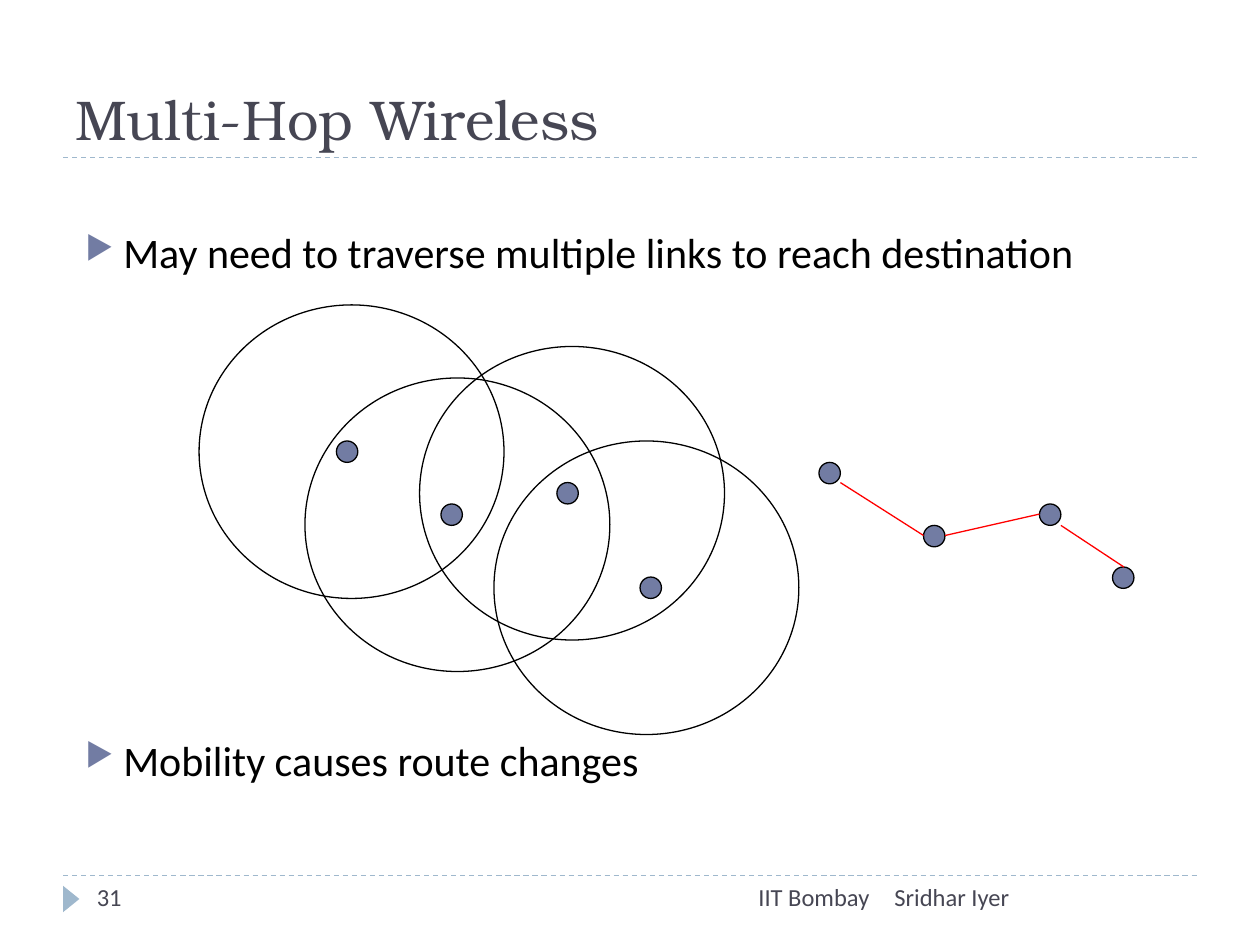
from typing import NamedTuple

import lxml.etree
import pptx
import pptx.dml.color
import pptx.enum.dml
import pptx.enum.shapes
import pptx.enum.text
import pptx.oxml
import pptx.oxml.ns
import pptx.util

Inches = pptx.util.Inches
Pt = pptx.util.Pt
Shapes = pptx.enum.shapes.MSO_SHAPE
Align = pptx.enum.text.PP_ALIGN
Anchor = pptx.enum.text.MSO_ANCHOR

COLORS = {
    "heading": "464653", "text": "000000", "node": "727CA3",
    "rule": "9FB8CD", "link": "FF0000", "paper": "FFFFFF",
}
BODY_FONT = "Calibri"
TITLE_FONT = "TeX Gyre Bonum"
RANGE_SIZE = (2.42, 2.33)
NODE_SIZE = (0.17, 0.17)


class Circle(NamedTuple):
    left: float
    top: float
    size: tuple[float, float]
    fill: str | None = None


class Line(NamedTuple):
    start: tuple[float, float]
    end: tuple[float, float]
    color: str
    dashed: bool = False


class Label(NamedTuple):
    text: str
    left: float
    top: float
    width: float
    height: float
    size: float = 14
    font: str = BODY_FONT
    align: Align = Align.LEFT
    anchor: Anchor = Anchor.TOP


class Bullet(NamedTuple):
    text: str
    space_before: float


RULES = [Line((0.5, y), (9.5, y), "rule", True) for y in (6.95, 1.25)]
LABELS = [
    Label("Sridhar Iyer", 7, 6.95, 2.5, 0.4),
    Label("IIT Bombay", 3.17, 6.95, 3.83, 0.4, align=Align.RIGHT),
    Label("31", 0.67, 6.95, 2.17, 0.4),
    Label("Multi-Hop Wireless", 0.5, 0.17, 9, 1.08, 32, TITLE_FONT,
          anchor=Anchor.BOTTOM),
]
# The space before the second bullet leaves room for the network drawing
BULLETS = [
    Bullet("May need to traverse multiple links to reach destination", 6),
    Bullet("Mobility causes route changes", 267),
]
RANGES = [
    Circle(1.58, 2.42, RANGE_SIZE, "paper"),
    Circle(2.42, 3, RANGE_SIZE),
    Circle(3.33, 2.75, RANGE_SIZE),
    Circle(3.92, 3.5, RANGE_SIZE),
]
NODES = [
    Circle(left, top, NODE_SIZE, "node")
    for left, top in (
        (2.67, 3.5), (3.5, 4), (4.42, 3.83), (5.08, 4.58),
        (6.5, 3.67), (7.33, 4.17), (8.25, 4), (8.83, 4.5),
    )
]
LINKS = [
    Line((6.67, 3.83), (7.33, 4.25), "link"),
    Line((7.5, 4.25), (8.25, 4.08), "link"),
    Line((8.42, 4.17), (8.92, 4.5), "link"),
]


def color(name: str) -> pptx.dml.color.RGBColor:
    return pptx.dml.color.RGBColor.from_string(COLORS[name])


def add_text(para, text: str, size: float, font: str, color_name: str) -> None:
    run = para.add_run()
    run.text = text
    run.font.size = Pt(size)
    run.font.name = font
    run.font.color.rgb = color(color_name)


def add_label(page, label: Label) -> None:
    box = page.shapes.add_textbox(Inches(label.left), Inches(label.top),
                                  Inches(label.width), Inches(label.height))
    box.text_frame.word_wrap = True
    box.text_frame.vertical_anchor = label.anchor
    para = box.text_frame.paragraphs[0]
    para.alignment = label.align
    add_text(para, label.text, label.size, label.font, "heading")


def set_bullet(para) -> None:
    props = para._p.get_or_add_pPr()
    props.set("marL", str(Inches(0.3)))
    props.set("indent", str(-Inches(0.3)))
    namespace = pptx.oxml.ns.nsdecls("a")
    for xml in (
        f'<a:buClr {namespace}><a:srgbClr val="{COLORS["node"]}"/></a:buClr>',
        f'<a:buSzPct {namespace} val="76000"/>',
        f'<a:buChar {namespace} char="▶"/>',
    ):
        props.append(pptx.oxml.parse_xml(xml))


def add_bullets(page, bullets: list[Bullet]) -> None:
    box = page.shapes.add_textbox(Inches(0.58), Inches(1.83),
                                  Inches(8.92), Inches(4.5))
    frame = box.text_frame
    frame.word_wrap = True
    for index, bullet in enumerate(bullets):
        para = frame.add_paragraph() if index else frame.paragraphs[0]
        para.line_spacing = 0.8
        para.space_before = Pt(bullet.space_before)
        set_bullet(para)
        add_text(para, bullet.text, 24, BODY_FONT, "text")


def add_line(page, line: Line) -> None:
    connector = page.shapes.add_connector(
        pptx.enum.shapes.MSO_CONNECTOR.STRAIGHT,
        *(Inches(value) for value in line.start + line.end))
    connector.line.color.rgb = color(line.color)
    connector.line.width = Pt(0.75)
    if line.dashed:
        connector.line.dash_style = pptx.enum.dml.MSO_LINE.DASH
    lxml.etree.SubElement(connector._element.spPr,
                          pptx.oxml.ns.qn("a:effectLst"))


def add_circle(page, circle: Circle) -> None:
    width, height = circle.size
    shape = page.shapes.add_shape(
        Shapes.OVAL, Inches(circle.left), Inches(circle.top),
        Inches(width), Inches(height))
    shape.shadow.inherit = False
    if circle.fill:
        shape.fill.solid()
        shape.fill.fore_color.rgb = color(circle.fill)
    else:
        shape.fill.background()
    shape.line.color.rgb = color("text")
    shape.line.width = Pt(0.75)


def add_page_marker(page) -> None:
    marker = page.shapes.add_shape(Shapes.ISOSCELES_TRIANGLE, Inches(0.46),
                                   Inches(7.07), Inches(0.21), Inches(0.13))
    marker.rotation = 90
    marker.shadow.inherit = False
    marker.fill.solid()
    marker.fill.fore_color.rgb = color("rule")
    marker.line.fill.background()


def main() -> None:
    deck = pptx.Presentation()
    deck.slide_width, deck.slide_height = Inches(10), Inches(7.5)
    page = deck.slides.add_slide(deck.slide_layouts[6])

    # Frame, title and footer
    for rule in RULES:
        add_line(page, rule)
    add_page_marker(page)
    for label in LABELS:
        add_label(page, label)

    # Body text
    add_bullets(page, BULLETS)

    # Radio ranges, nodes and the route between them
    for circle in RANGES + NODES:
        add_circle(page, circle)
    for link in LINKS:
        add_line(page, link)

    deck.save("out.pptx")


if __name__ == "__main__":
    main()
